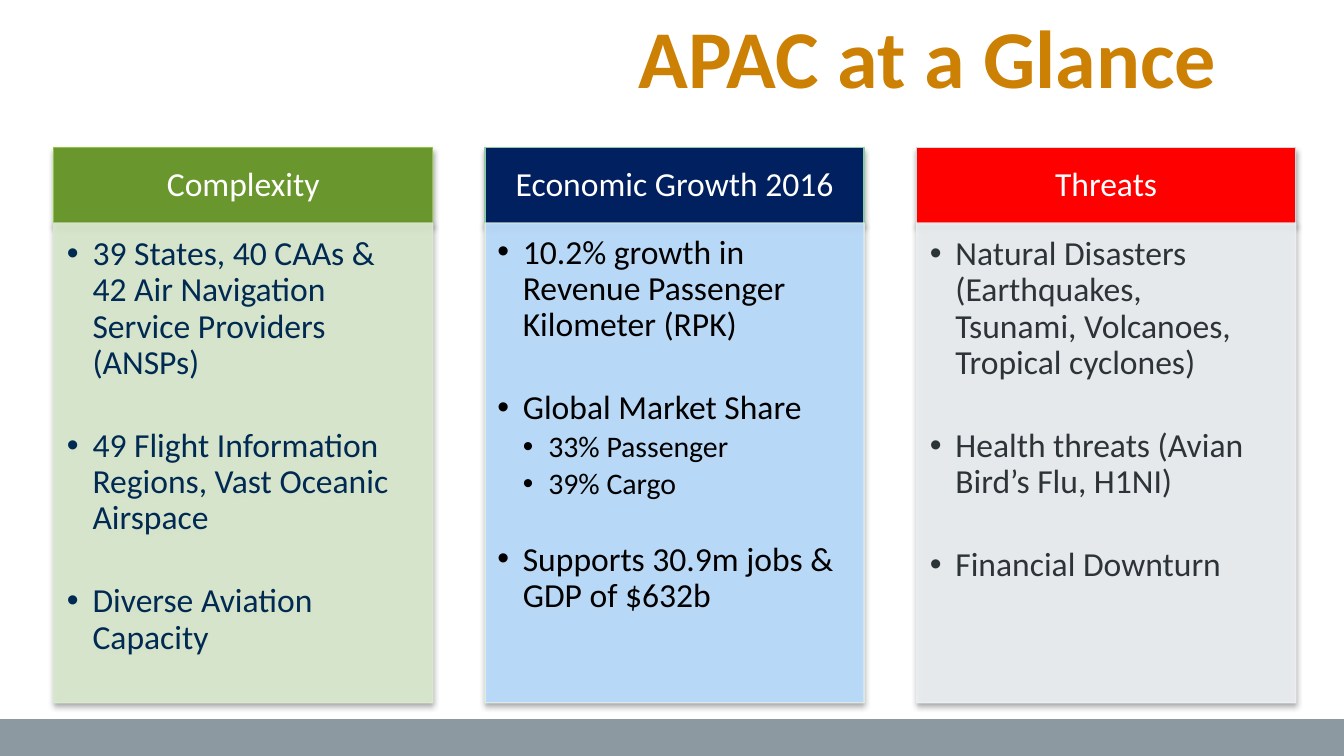
from dataclasses import dataclass

from lxml.etree import SubElement
from pptx import Presentation
from pptx.dml.color import RGBColor
from pptx.enum.shapes import MSO_SHAPE
from pptx.enum.text import MSO_ANCHOR, PP_ALIGN
from pptx.oxml.ns import qn
from pptx.util import Inches, Pt


@dataclass(frozen=True)
class Theme:
    """Colours, fonts and type sizes of the slide."""
    font: str = "Calibri"
    bullet_font: str = "Arial"
    title: str = "CC8004"
    band: str = "8C99A1"
    white: str = "FFFFFF"
    shadow: str = "000000"
    title_size: int = 44
    text_size: int = 18
    sub_size: int = 16


@dataclass(frozen=True)
class Column:
    """Content and colours of one heading with its card."""
    heading: str
    head_fill: str
    head_line: str
    body_fill: str
    body_line: str
    text: str
    insets: tuple
    items: tuple


THEME = Theme()
HEAD_INSETS = (0.14, 0.08, 0.14, 0.08)
LEFT, PITCH, WIDTH = 0.4, 3.21, 2.82
HEAD_TOP, HEAD_HEIGHT = 1.1, 0.57
BODY_TOP, BODY_HEIGHT = 1.66, 3.57
BAND_TOP = 5.35

COLUMNS = (
    Column("Complexity", "6A972D", "8DC63F", "DBEACF", "DBEACF", "002A52",
           (0.1, 0.1, 0.14, 0.16), (
               (0, 0, "39 States, 40 CAAs & 42 Air Navigation Service Providers (ANSPs)"),
               (0, 25, "49 Flight Information Regions, Vast Oceanic Airspace"),
               (0, 25, "Diverse Aviation Capacity"),
           )),
    Column("Economic Growth 2016", "002060", "8ECAA5", "BADDFF", "DFEDE5", "000000",
           (0.09, 0.09, 0.12, 0.14), (
               (0, 0, "10.2% growth in Revenue Passenger Kilometer (RPK)"),
               (0, 25, "Global Market Share"),
               (1, 2.7, "33% Passenger"),
               (1, 2.4, "39% Cargo"),
               (0, 22, "Supports 30.9m jobs & GDP of $632b"),
           )),
    Column("Threats", "FF0000", "CED8DD", "EDF0F2", "EDF0F2", "2D3438",
           (0.1, 0.1, 0.27, 0.16), (
               (0, 0, "Natural Disasters (Earthquakes, Tsunami, Volcanoes, Tropical cyclones)"),
               (0, 25, "Health threats (Avian Bird’s Flu, H1NI)"),
               (0, 25, "Financial Downturn"),
           )),
)


def add_run(p, text, size, color, bold=False):
    """Add one formatted run to a paragraph."""
    r = p.add_run()
    r.text = text
    r.font.name = THEME.font
    r.font.size = Pt(size)
    r.font.bold = bold
    r.font.color.rgb = RGBColor.from_string(color)


def setup_frame(tf, insets, anchor):
    """Set wrapping, margins and anchor of a text frame."""
    tf.word_wrap = True
    tf.vertical_anchor = anchor
    tf.margin_left, tf.margin_top, tf.margin_right, tf.margin_bottom = map(Inches, insets)


def set_alpha(fill, percent):
    """Make a solid fill partly transparent."""
    color = fill._xPr.find(qn("a:solidFill"))[0]
    SubElement(color, qn("a:alpha"), val=str(percent * 1000))


def add_shadow(sp):
    """Give a shape a soft shadow below it."""
    effects = sp._element.spPr.find(qn("a:effectLst"))
    shadow = SubElement(effects, qn("a:outerShdw"), blurRad=str(Pt(3.1)), dist=str(Pt(1.8)),
                        dir="5400000", rotWithShape="0")
    color = SubElement(shadow, qn("a:srgbClr"), val=THEME.shadow)
    SubElement(color, qn("a:alpha"), val="35000")


def add_rect(s, left, top, width, height, fill, line=None):
    """Add a plain rectangle, outlined when a line colour is given."""
    sp = s.shapes.add_shape(MSO_SHAPE.RECTANGLE, Inches(left), Inches(top),
                            Inches(width), Inches(height))
    sp.shadow.inherit = False
    sp.fill.solid()
    sp.fill.fore_color.rgb = RGBColor.from_string(fill)
    if line:
        sp.line.color.rgb = RGBColor.from_string(line)
        sp.line.width = Pt(0.75)
    else:
        sp.line.fill.background()
    return sp


def add_title(s, text):
    """Add the slide title."""
    tf = s.shapes.add_textbox(Inches(3.4), Inches(0), Inches(7.01), Inches(0.79)).text_frame
    setup_frame(tf, (0.1, 0.05, 0.1, 0), MSO_ANCHOR.TOP)
    p = tf.paragraphs[0]
    p.alignment = PP_ALIGN.CENTER
    add_run(p, text, THEME.title_size, THEME.title, bold=True)


def add_heading(s, left, col):
    """Add the coloured heading of a column."""
    sp = add_rect(s, left, HEAD_TOP, WIDTH, HEAD_HEIGHT, col.head_fill, col.head_line)
    add_shadow(sp)
    setup_frame(sp.text_frame, HEAD_INSETS, MSO_ANCHOR.MIDDLE)
    p = sp.text_frame.paragraphs[0]
    p.alignment = PP_ALIGN.CENTER
    p.line_spacing = 0.9
    add_run(p, col.heading, THEME.text_size, THEME.white)


def add_bullet(p, level, gap, text, color):
    """Fill a paragraph with one bulleted item."""
    p.level = level + 1
    p.alignment = PP_ALIGN.LEFT
    pPr = p._p.get_or_add_pPr()
    pPr.set("marL", str(Inches(0.19 * (level + 1))))
    pPr.set("indent", str(Inches(-0.19)))
    SubElement(pPr, qn("a:buFont"), typeface=THEME.bullet_font)
    SubElement(pPr, qn("a:buChar"), char="•")
    p.line_spacing = 0.9
    p.space_before = Pt(gap)
    add_run(p, text, THEME.sub_size if level else THEME.text_size, color)


def add_card(s, left, col):
    """Add the translucent card with the bullets of a column."""
    sp = add_rect(s, left, BODY_TOP, WIDTH, BODY_HEIGHT, col.body_fill, col.body_line)
    set_alpha(sp.fill, 90)
    set_alpha(sp.line.fill, 90)
    add_shadow(sp)
    tf = sp.text_frame
    setup_frame(tf, col.insets, MSO_ANCHOR.TOP)
    for i, (level, gap, text) in enumerate(col.items):
        p = tf.add_paragraph() if i else tf.paragraphs[0]
        add_bullet(p, level, gap, text, col.text)


def main():
    """Build the slide and save it."""
    prs = Presentation()
    prs.slide_width = Inches(10)
    prs.slide_height = Inches(10 * 9 / 16)
    s = prs.slides.add_slide(prs.slide_layouts[6])
    add_rect(s, 0, BAND_TOP, 10, prs.slide_height.inches - BAND_TOP, THEME.band)
    add_title(s, "APAC at a Glance")
    for i, col in enumerate(COLUMNS):
        left = LEFT + i * PITCH
        add_heading(s, left, col)
        add_card(s, left, col)
    prs.save("out.pptx")


if __name__ == "__main__":
    main()
